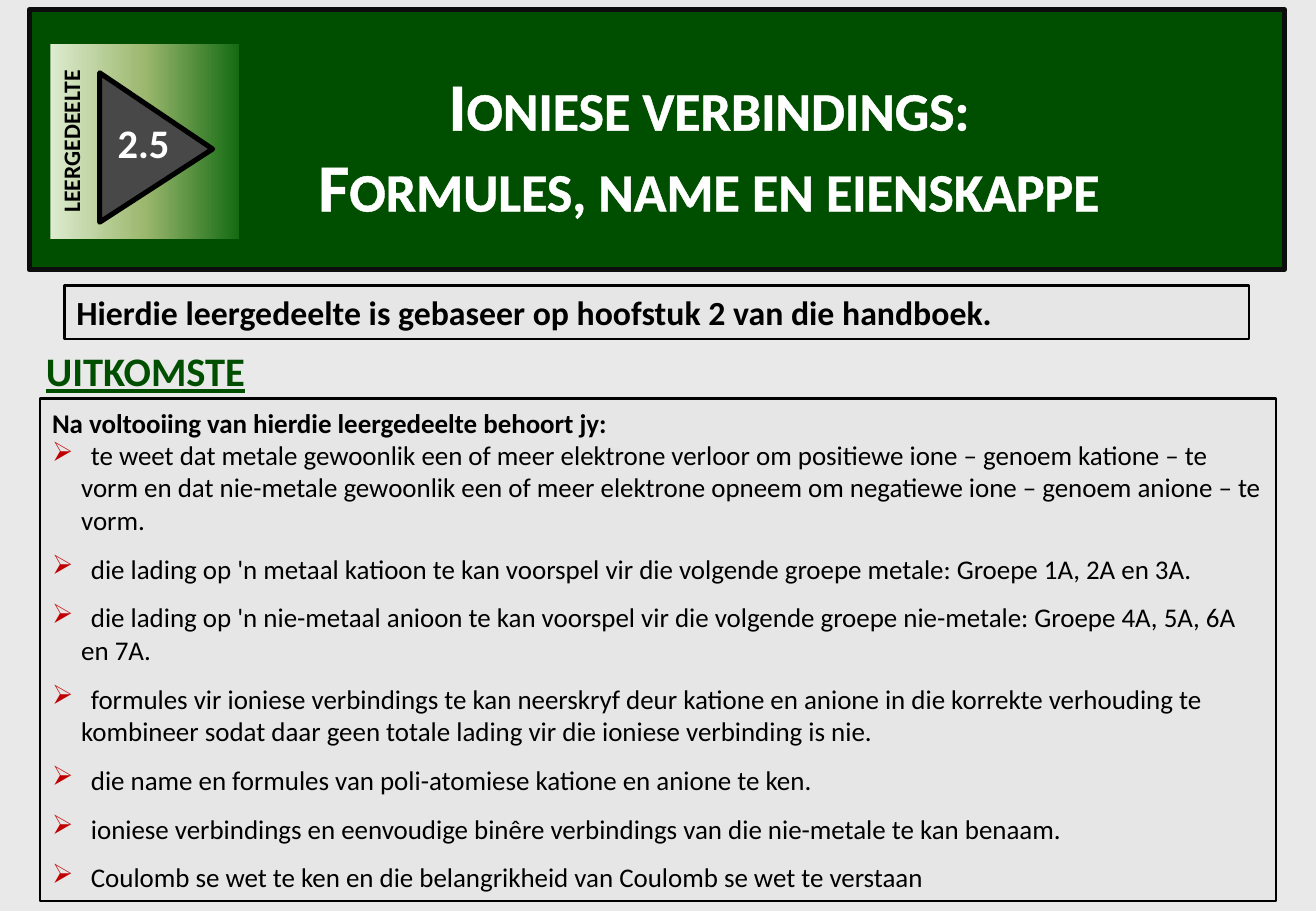
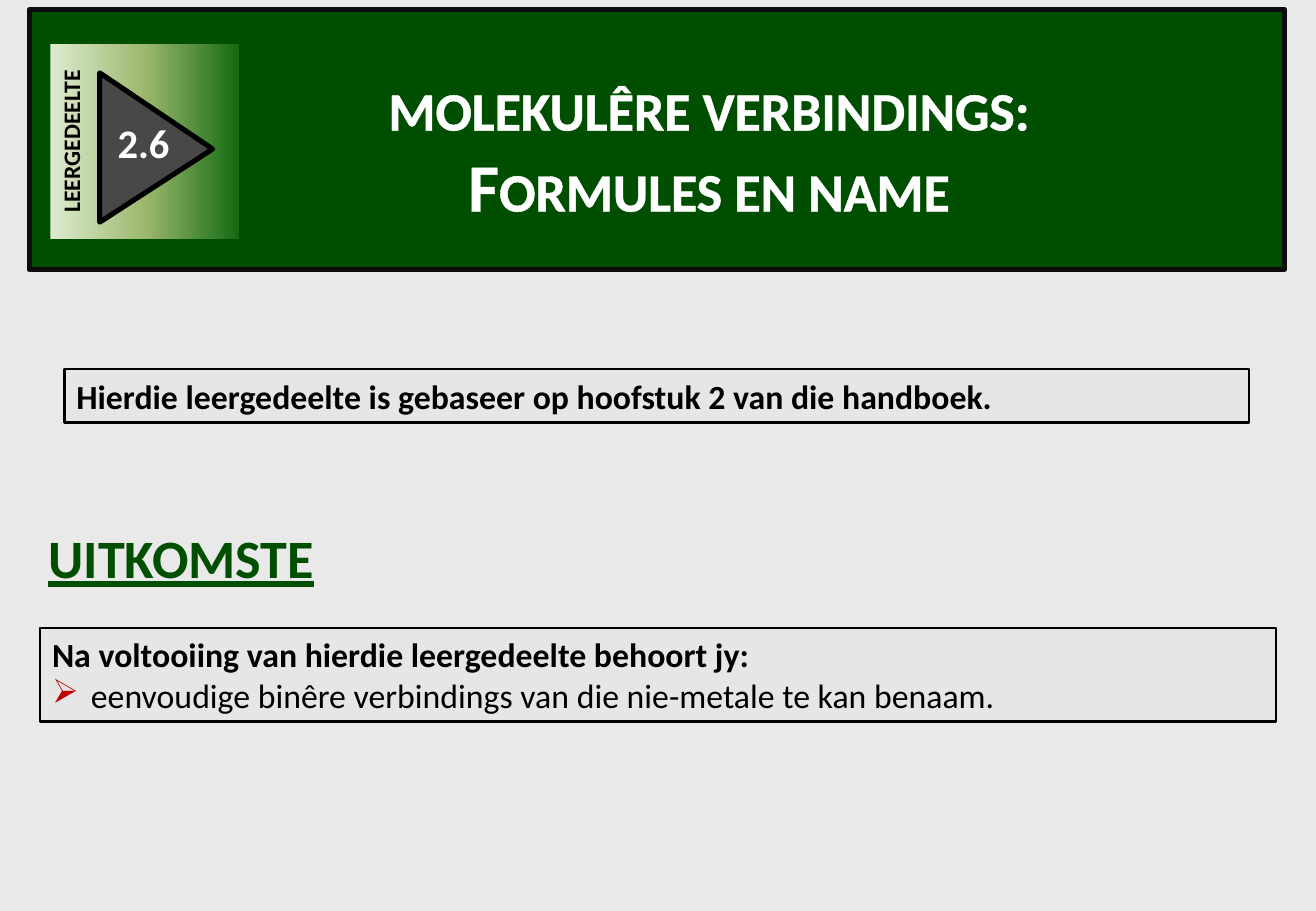
from lxml.etree import SubElement
from copy import deepcopy
from pptx import Presentation
from pptx.dml.color import RGBColor
from pptx.enum.shapes import MSO_SHAPE
from pptx.enum.text import MSO_ANCHOR, MSO_AUTO_SIZE, PP_ALIGN
from pptx.oxml.ns import qn
from pptx.util import Inches, Pt

GREEN, WHITE, BLACK, RED = "004E00", "FFFFFF", "000000", "C00000"
PAGE_GREY, BOX_GREY, ARROW_GREY, BAND_EDGE = "E9E9E9", "E6E6E6", "484848", "0D0D0D"
BADGE_STOPS = [(0, "DDEBCF"), (0.5, "9CB86E"), (1, "156B13")]
FONT = "Calibri"
HANGING, FIRST_TAB = 0.24, 0.32
BULLET_GAP = 9.75
BASIS = "Hierdie leergedeelte is gebaseer op hoofstuk 2 van die handboek."
LEAD_IN = "Na voltooiing van hierdie leergedeelte behoort jy:"


def colour(code):
    return RGBColor.from_string(code)


def place(left, top, width, height):
    return [Inches(value) for value in (left, top, width, height)]


def outline_text(span, code, width):
    line = span.font._element.makeelement(qn("a:ln"), w=str(Pt(width)))
    fill = SubElement(line, qn("a:solidFill"))
    SubElement(fill, qn("a:srgbClr"), val=code)
    span.font._element.insert(0, line)


def add_bullet(para):
    """Give the paragraph a red arrow bullet and a tab stop for its first line."""
    properties = para._p.get_or_add_pPr()
    properties.set("marL", str(Inches(HANGING)))
    properties.set("indent", str(-Inches(HANGING)))
    bullet_colour = SubElement(properties, qn("a:buClr"))
    SubElement(bullet_colour, qn("a:srgbClr"), val=RED)
    SubElement(properties, qn("a:buChar"), char="➢")
    tabs = SubElement(properties, qn("a:tabLst"))
    SubElement(tabs, qn("a:tab"), pos=str(Inches(FIRST_TAB)), algn="l")


class StudyUnitDeck:
    def __init__(self):
        self.deck = Presentation()
        self.deck.slide_width, self.deck.slide_height = Inches(10.83), Inches(7.5)
        self.page = None

    def new_page(self):
        self.page = self.deck.slides.add_slide(self.deck.slide_layouts[6])
        background = self.page.background.fill
        background.solid()
        background.fore_color.rgb = colour(PAGE_GREY)

    def shape(self, kind, area, fill=None, line=None, width=1.5, rotation=0):
        shape = self.page.shapes.add_shape(kind, *place(*area))
        shape.shadow.inherit = False
        shape.rotation = rotation
        if fill:
            shape.fill.solid()
            shape.fill.fore_color.rgb = colour(fill)
        if line:
            shape.line.color.rgb = colour(line)
            shape.line.width = Pt(width)
        else:
            shape.line.fill.background()
        return shape

    def set_text(self, box, lines, size, code, align=PP_ALIGN.LEFT,
                 anchor=MSO_ANCHOR.TOP, wrap=True):
        """Fill a box with one bold paragraph a line and return the runs."""
        frame = box.text_frame
        frame.word_wrap = wrap
        frame.auto_size = MSO_AUTO_SIZE.SHAPE_TO_FIT_TEXT
        frame.vertical_anchor = anchor
        frame.text = "\n".join(lines)
        spans = []
        for para in frame.paragraphs:
            para.alignment = align
            for span in para.runs:
                span.font.name, span.font.size = FONT, Pt(size)
                span.font.bold = True
                span.font.color.rgb = colour(code)
                spans.append(span)
        return spans

    def label(self, area, lines, size, code, **style):
        box = self.page.shapes.add_textbox(*place(*area))
        return self.set_text(box, lines, size, code, **style)

    def banner(self, title_lines, number):
        self.shape(MSO_SHAPE.RECTANGLE, (0.24, 0.08, 10.33, 2.14), GREEN, BAND_EDGE, 3)
        for span in self.label((2.17, 0.47, 7.33, 1.45), title_lines, 40, WHITE,
                               align=PP_ALIGN.CENTER):
            span.font._element.set("cap", "small")
            outline_text(span, WHITE, 0.75)
        self.badge(number)

    def badge(self, number):
        badge = self.shape(MSO_SHAPE.RECTANGLE, (0.39, 0.39, 1.6, 1.55), rotation=270)
        badge.fill.gradient()
        badge.fill.gradient_angle = 270
        stop_list = badge._element.spPr.find(".//" + qn("a:gsLst"))
        stop_list.insert(1, deepcopy(stop_list[0]))
        for stop, (position, code) in zip(badge.fill.gradient_stops, BADGE_STOPS):
            stop.position = position
            stop.color.rgb = colour(code)
        self.set_text(badge, ["LEERGEDEELTE"], 14, BLACK, align=PP_ALIGN.CENTER)
        arrow = self.shape(MSO_SHAPE.ISOSCELES_TRIANGLE, (0.67, 0.75, 1.23, 0.93),
                           ARROW_GREY, BLACK, 3, rotation=90)
        arrow.adjustments[0] = 0.51
        self.label((0.87, 0.92, 0.63, 0.51), [number], 24, WHITE, wrap=False)

    def boxed_text(self, area, lines, size):
        box = self.shape(MSO_SHAPE.RECTANGLE, area, BOX_GREY, BLACK)
        self.set_text(box, lines, size, BLACK, anchor=MSO_ANCHOR.MIDDLE)
        return box

    def basis(self, top):
        self.boxed_text((0.53, top, 9.75, 0.44), [BASIS], 20)

    def heading(self, left, top, height, size):
        for span in self.label((left, top, 2.89, height), ["UITKOMSTE"], size, GREEN):
            span.font.underline = True
            outline_text(span, BLACK, 0.25)

    def outcomes(self, top, height, size, items):
        lines = [LEAD_IN] + ["\t" + item for item in items]
        box = self.boxed_text((0.33, top, 10.17, height), lines, size)
        for index, para in enumerate(box.text_frame.paragraphs[1:]):
            para.space_before = Pt(BULLET_GAP if index else 0)
            add_bullet(para)
            for span in para.runs:
                span.font.bold = False


def main():
    unit = StudyUnitDeck()

    unit.new_page()
    unit.banner(["Ioniese verbindings:", "Formules, name en eienskappe"], "2.5")
    unit.heading(0.28, 2.8, 0.5, 24)
    unit.outcomes(3.28, 4.14, 16, [
        "te weet dat metale gewoonlik een of meer elektrone verloor om positiewe ione – "
        "genoem katione – te vorm en dat nie-metale gewoonlik een of meer elektrone "
        "opneem om negatiewe ione – genoem anione – te vorm.",
        "die lading op 'n metaal katioon te kan voorspel vir die volgende groepe metale: "
        "Groepe 1A, 2A en 3A.",
        "die lading op 'n nie-metaal anioon te kan voorspel vir die volgende groepe "
        "nie-metale: Groepe 4A, 5A, 6A en 7A.",
        "formules vir ioniese verbindings te kan neerskryf deur katione en anione in die "
        "korrekte verhouding te kombineer sodat daar geen totale lading vir die ioniese "
        "verbinding is nie.",
        "die name en formules van poli-atomiese katione en anione te ken.",
        "ioniese verbindings en eenvoudige binêre verbindings van die nie-metale te kan "
        "benaam.",
        "Coulomb se wet te ken en die belangrikheid van Coulomb se wet te verstaan",
    ])
    unit.basis(2.35)

    unit.new_page()
    unit.banner(["molekulêre verbindings:", "Formules en name"], "2.6")
    unit.heading(0.3, 4.27, 0.64, 32)
    unit.outcomes(5.17, 0.77, 20, [
        "eenvoudige binêre verbindings van die nie-metale te kan benaam.",
    ])
    unit.basis(3.04)

    unit.deck.save("out.pptx")


if __name__ == "__main__":
    main()
